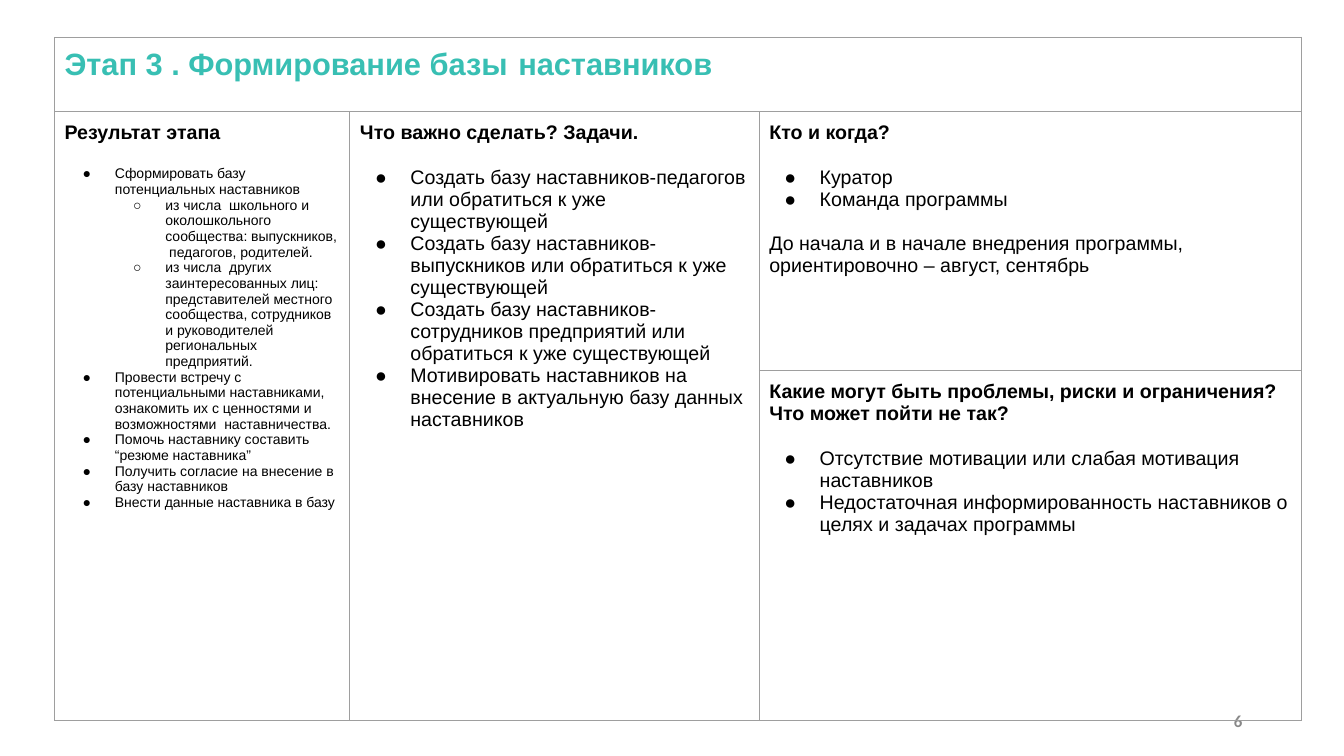
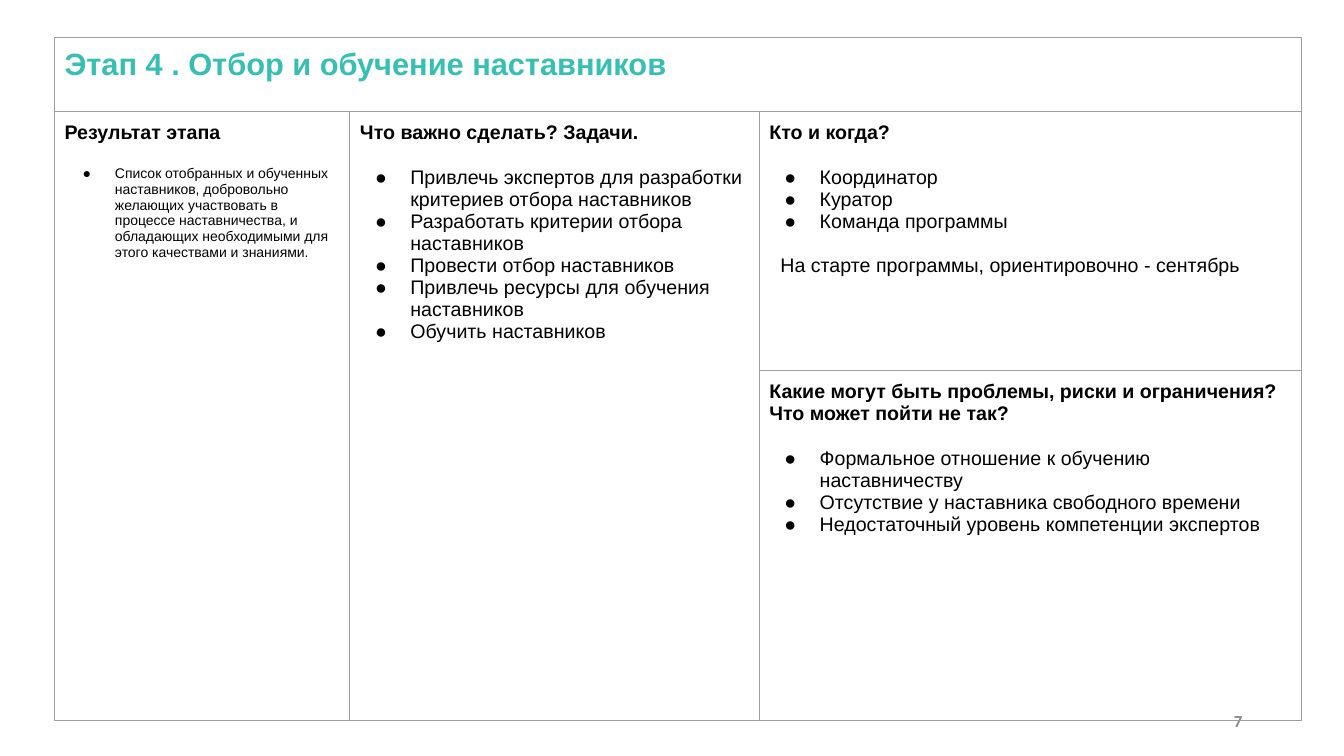
import pptx
import pptx.dml.color
import pptx.enum.text
import pptx.oxml
import pptx.oxml.ns
import pptx.util

Inches = pptx.util.Inches
Pt = pptx.util.Pt
RGBColor = pptx.dml.color.RGBColor

TEAL = RGBColor(0x38, 0xBF, 0xB3)
BLACK = RGBColor(0x00, 0x00, 0x00)
GREY = RGBColor(0x88, 0x88, 0x88)
BORDER = RGBColor(0x9E, 0x9E, 0x9E)

COLUMN_WIDTHS = (2.93, 4.06, 5.38)
ROW_HEIGHTS = (0.74, 2.57, 3.47)
BULLETS = "●○"
BLANK_LAYOUT = 6

STAGES = [
    {
        "number": 6,
        "title": "Этап 3 . Формирование базы\tнаставников",
        "results": [
            "Сформировать базу потенциальных наставников",
            [
                "из числа  школьного и околошкольного сообщества: "
                "выпускников,  педагогов, родителей.",
                "из числа  других заинтересованных лиц: представителей местного "
                "сообщества, сотрудников и руководителей региональных предприятий.",
            ],
            "Провести встречу с потенциальными наставниками,  ознакомить их "
            "с ценностями и возможностями  наставничества.",
            "Помочь наставнику составить “резюме наставника”",
            "Получить согласие на внесение в базу наставников",
            "Внести данные наставника в базу",
        ],
        "tasks": [
            "Создать базу наставников-педагогов или обратиться к уже существующей",
            "Создать базу наставников-выпускников или обратиться к уже существующей",
            "Создать базу наставников-сотрудников предприятий или обратиться "
            "к уже существующей",
            "Мотивировать наставников на внесение в актуальную базу данных наставников",
        ],
        "people": ["Куратор", "Команда программы"],
        "timing": "До начала и в начале внедрения программы, "
                  "ориентировочно – август, сентябрь",
        "timing_indent": 0,
        "risks": [
            "Отсутствие мотивации или слабая мотивация наставников",
            "Недостаточная информированность наставников о целях и задачах программы",
        ],
    },
    {
        "number": 7,
        "title": "Этап 4 . Отбор и обучение наставников",
        "results": [
            "Список отобранных и обученных наставников, добровольно  желающих "
            "участвовать в процессе наставничества, и  обладающих необходимыми "
            "для этого качествами и знаниями.",
        ],
        "tasks": [
            "Привлечь экспертов для разработки критериев отбора наставников",
            "Разработать критерии отбора наставников",
            "Провести отбор наставников",
            "Привлечь ресурсы для обучения наставников",
            "Обучить наставников",
        ],
        "people": ["Координатор", "Куратор", "Команда программы"],
        "timing": "На старте программы, ориентировочно - сентябрь",
        "timing_indent": 0.11,
        "risks": [
            "Формальное отношение к обучению наставничеству",
            "Отсутствие у наставника свободного времени",
            "Недостаточный уровень компетенции экспертов",
        ],
    },
]


class StageDeck:
    """Holds the shared style and the slide being filled."""

    font_name = "Arial"
    body_size = 14
    small_size = 10
    title_size = 22
    line_gap = Pt(16)

    def __init__(self):
        self.presentation = pptx.Presentation()
        self.presentation.slide_width = Inches(13.33)
        self.presentation.slide_height = Inches(7.5)
        self.slide = None

    def new_slide(self):
        layout = self.presentation.slide_layouts[BLANK_LAYOUT]
        self.slide = self.presentation.slides.add_slide(layout)

    def style(self, paragraph, size, color=BLACK, bold=False, font_name=font_name):
        font = paragraph.font
        font.name = font_name
        font.size = Pt(size)
        font.bold = bold
        font.color.rgb = color

    def page_number(self, number):
        box = self.slide.shapes.add_textbox(
            Inches(9.42), Inches(6.95), Inches(3), Inches(0.4))
        frame = box.text_frame
        frame.word_wrap = True
        frame.vertical_anchor = pptx.enum.text.MSO_ANCHOR.MIDDLE
        paragraph = frame.paragraphs[0]
        paragraph.text = str(number)
        paragraph.alignment = pptx.enum.text.PP_ALIGN.RIGHT
        self.style(paragraph, 12, GREY, bold=True, font_name="Calibri")

    def grid(self):
        """Add the bordered table with its merged title row and tall columns."""
        frame = self.slide.shapes.add_table(
            len(ROW_HEIGHTS), len(COLUMN_WIDTHS), Inches(0.54), Inches(0.37),
            Inches(sum(COLUMN_WIDTHS)), Inches(sum(ROW_HEIGHTS)))
        table = frame.table
        table.first_row = table.horz_banding = False
        for column, width in zip(table.columns, COLUMN_WIDTHS):
            column.width = Inches(width)
        for row, height in zip(table.rows, ROW_HEIGHTS):
            row.height = Inches(height)
        for cell in table.iter_cells():
            cell.margin_left = cell.margin_right = Inches(0.1)
            cell.margin_top = cell.margin_bottom = Inches(0.1)
            self.border(cell)
            cell.fill.background()
        table.cell(0, 0).merge(table.cell(0, 2))
        for column in (0, 1):
            table.cell(1, column).merge(table.cell(2, column))
        return table

    def border(self, cell):
        properties = cell._tc.get_or_add_tcPr()
        for side in "LRTB":
            properties.append(pptx.oxml.parse_xml(
                f'<a:ln{side} {pptx.oxml.ns.nsdecls("a")} w="{Pt(0.75)}">'
                f'<a:solidFill><a:srgbClr val="{BORDER}"/></a:solidFill>'
                f'</a:ln{side}>'))

    def indent(self, paragraph, left, first_line=0):
        properties = paragraph._p.get_or_add_pPr()
        properties.set("marL", str(Inches(left)))
        properties.set("indent", str(Inches(first_line)))
        return properties

    def heading(self, cell, text, size=body_size, color=BLACK):
        paragraph = cell.text_frame.paragraphs[0]
        paragraph.text = text
        paragraph.space_after = self.line_gap
        self.style(paragraph, size, color, bold=True)

    def bullets(self, cell, items, size=body_size, level=0):
        """Add bulleted items; a nested list goes one level deeper."""
        for item in items:
            if isinstance(item, list):
                self.bullets(cell, item, size, level + 1)
                continue
            paragraph = cell.text_frame.add_paragraph()
            paragraph.text = item
            paragraph.level = level
            hanging = -0.32 if size == self.small_size else -0.35
            properties = self.indent(paragraph, 0.5 * (level + 1), hanging)
            for tag in (f'buClr {pptx.oxml.ns.nsdecls("a")}><a:srgbClr val="{BLACK}"/></a:buClr',
                        f'buFont {pptx.oxml.ns.nsdecls("a")} typeface="{self.font_name}"/',
                        f'buChar {pptx.oxml.ns.nsdecls("a")} char="{BULLETS[level]}"/'):
                properties.append(pptx.oxml.parse_xml(f"<a:{tag}>"))
            self.style(paragraph, size)

    def note(self, cell, text, left):
        paragraph = cell.text_frame.add_paragraph()
        paragraph.text = text
        paragraph.space_before = self.line_gap
        self.indent(paragraph, left)
        self.style(paragraph, self.body_size)

    def stage(self, content):
        self.new_slide()
        self.page_number(content["number"])
        table = self.grid()
        self.heading(table.cell(0, 0), content["title"], self.title_size, TEAL)
        sections = (
            (1, 0, "Результат этапа", "results", self.small_size),
            (1, 1, "Что важно сделать? Задачи.", "tasks", self.body_size),
            (1, 2, "Кто и когда?", "people", self.body_size),
            (2, 2, "Какие могут быть проблемы, риски и ограничения? "
                   "Что может пойти не так?", "risks", self.body_size),
        )
        for row, column, heading, key, size in sections:
            cell = table.cell(row, column)
            self.heading(cell, heading)
            self.bullets(cell, content[key], size)
        self.note(table.cell(1, 2), content["timing"], content["timing_indent"])


def main():
    deck = StageDeck()
    for content in STAGES:
        deck.stage(content)
    deck.presentation.save("out.pptx")


if __name__ == "__main__":
    main()
